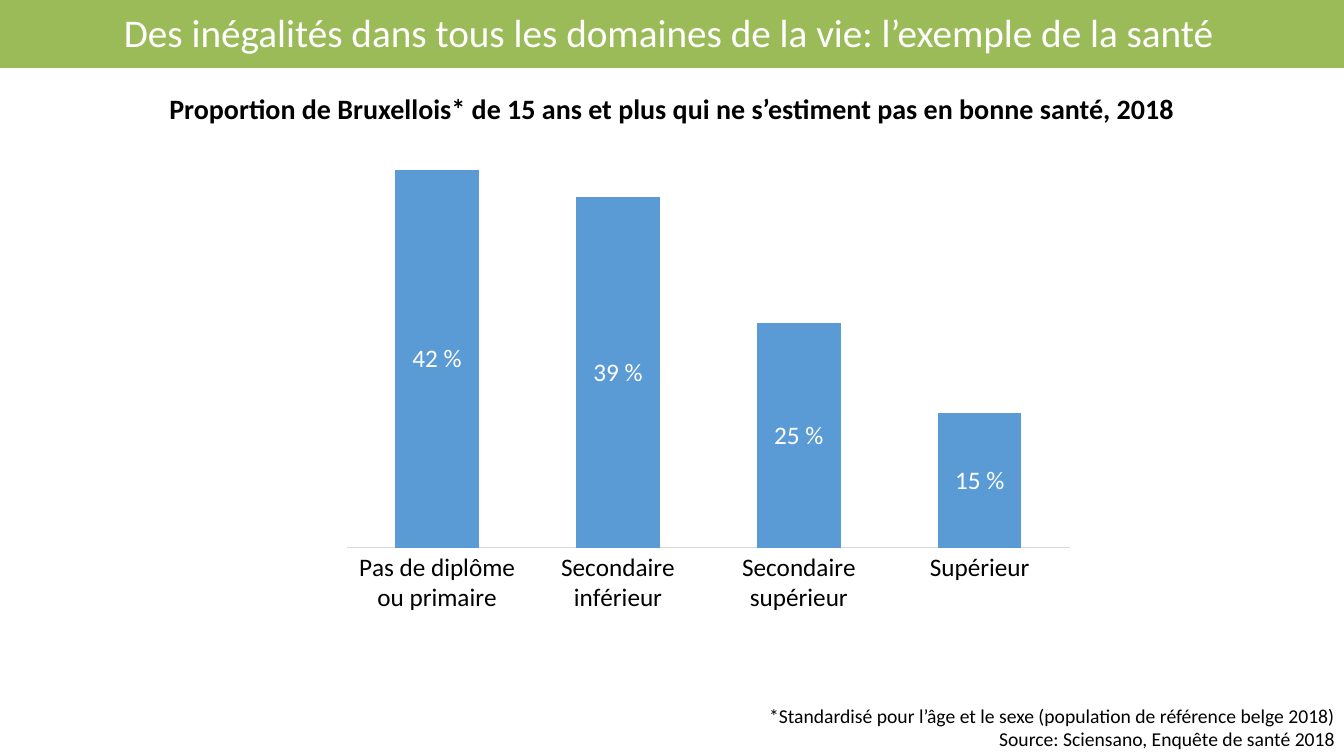
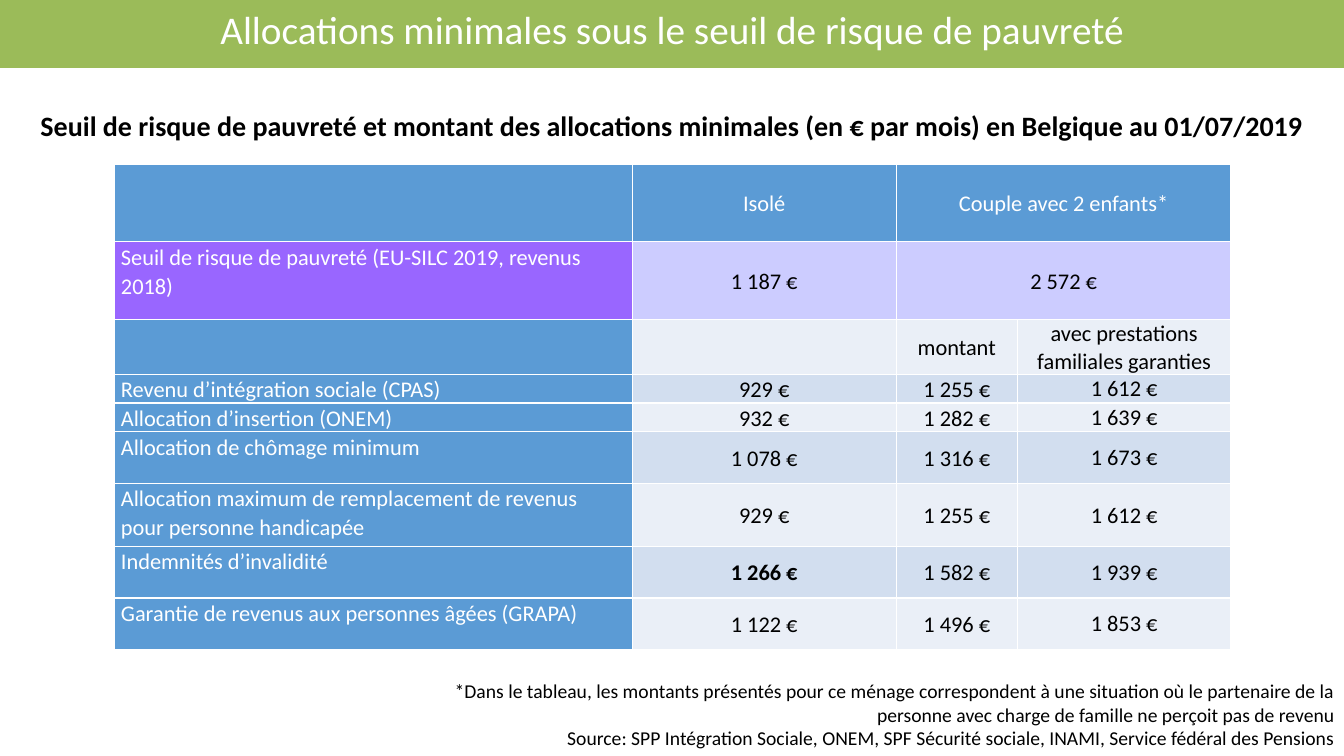
import dataclasses

import pptx
import pptx.chart.data
import pptx.dml.color
import pptx.enum.chart
import pptx.enum.text
import pptx.oxml
import pptx.oxml.ns
import pptx.util

Inches, Pt = pptx.util.Inches, pptx.util.Pt
ALIGN = pptx.enum.text.PP_ALIGN
ANCHOR = pptx.enum.text.MSO_ANCHOR

FONT = "Calibri"
HEX = {
    "band": "9BBB59",
    "white": "FFFFFF",
    "black": "000000",
    "blue": "5B9BD5",
    "dark": "D2DEEF",
    "light": "EAEFF7",
    "violet": "9966FF",
    "lilac": "CCCCFF",
    "axis": "D9D9D9",
}


@dataclasses.dataclass(frozen=True)
class Style:
    size: int
    color: str = "black"
    bold: bool = False
    align: ALIGN = ALIGN.CENTER


@dataclasses.dataclass(frozen=True)
class Box:
    left: float
    top: float
    width: float
    height: float

    def lengths(self) -> list:
        return [Inches(side) for side in dataclasses.astuple(self)]


@dataclasses.dataclass(frozen=True)
class Row:
    height: float
    texts: tuple
    head: str
    body: str
    bold: int = -1  # column set in bold


TITLE = Style(28, "white")
LEAD = Style(20, bold=True)
NOTE = Style(14, align=ALIGN.RIGHT)
HEAD = Style(16, "white", align=ALIGN.LEFT)
TOP = Style(16, "white")
BODY = Style(16)
AXIS = Style(18)
LABEL = Style(18, "white")

SHARES = {
    "Pas de diplôme ou primaire": 42,
    "Secondaire inférieur": 39,
    "Secondaire supérieur": 25,
    "Supérieur": 15,
}

COLS = (5.14, 2.62, 1.2, 2.12)
ROWS = (
    Row(0.77, ("", "Isolé", "Couple avec 2 enfants*"), "blue", "blue"),
    Row(0.77, ("Seuil de risque de pauvreté (EU-SILC 2019, revenus 2018)",
               "1 187 €", "2 572 €"), "violet", "lilac"),
    Row(0.25, ("", "", "montant", "avec prestations familiales garanties"),
        "blue", "light"),
    Row(0.25, ("Revenu d’intégration sociale (CPAS)",
               "929 €", "1 255 €", "1 612 €"), "blue", "dark"),
    Row(0.25, ("Allocation d’insertion (ONEM)",
               "932 €", "1 282 €", "1 639 €"), "blue", "light"),
    Row(0.51, ("Allocation de chômage minimum",
               "1 078 €", "1 316 €", "1 673 €"), "blue", "dark"),
    Row(0.63, ("Allocation maximum de remplacement de revenus pour personne "
               "handicapée", "929 €", "1 255 €", "1 612 €"), "blue", "light"),
    Row(0.51, ("Indemnités d’invalidité",
               "1 266 €", "1 582 €", "1 939 €"), "blue", "dark", bold=1),
    Row(0.51, ("Garantie de revenus aux personnes âgées (GRAPA)",
               "1 122 €", "1 496 €", "1 853 €"), "blue", "light"),
)


def rgb(name: str) -> pptx.dml.color.RGBColor:
    return pptx.dml.color.RGBColor.from_string(HEX[name])


def set_font(font, style: Style) -> None:
    font.name = FONT
    font.size = Pt(style.size)
    font.bold = style.bold
    font.color.rgb = rgb(style.color)


def paint_band(master) -> None:
    """Give every slide a white page with a green band on top."""
    fill = master.background.fill
    fill.gradient()
    fill.gradient_angle = 270
    for stop, name in zip(fill.gradient_stops, ("band", "white")):
        stop.position = 0.09
        stop.color.rgb = rgb(name)


def add_text(slide, box: Box, style: Style, *lines: str) -> None:
    frame = slide.shapes.add_textbox(*box.lengths()).text_frame
    frame.word_wrap = True
    frame.auto_size = pptx.enum.text.MSO_AUTO_SIZE.SHAPE_TO_FIT_TEXT
    frame.text = "\n".join(lines)
    for para in frame.paragraphs:
        para.alignment = style.align
        set_font(para.font, style)


def place_plot(chart, box: Box) -> None:
    """Fix the inner plot area, in fractions of the chart."""
    area = chart._chartSpace.chart.plotArea
    for old in area.findall(pptx.oxml.ns.qn("c:layout")):
        area.remove(old)
    sides = zip("xywh", dataclasses.astuple(box))
    parts = "".join(f'<c:{key} val="{val}"/>' for key, val in sides)
    area.insert(0, pptx.oxml.parse_xml(
        f'<c:layout {pptx.oxml.ns.nsdecls("c")}><c:manualLayout>'
        '<c:layoutTarget val="inner"/><c:xMode val="edge"/>'
        f'<c:yMode val="edge"/>{parts}</c:manualLayout></c:layout>'))


def add_bars(slide, box: Box) -> None:
    enum = pptx.enum.chart
    data = pptx.chart.data.CategoryChartData()
    data.categories = list(SHARES)
    data.add_series("Series 1", list(SHARES.values()))
    chart = slide.shapes.add_chart(
        enum.XL_CHART_TYPE.COLUMN_CLUSTERED, *box.lengths(), data).chart
    chart.has_legend = chart.has_title = False
    set_font(chart.font, Style(10))
    place_plot(chart, Box(0.1, 0.03, 0.9, 0.81))

    plot = chart.plots[0]
    plot.vary_by_categories = False
    plot.gap_width, plot.overlap = 117, -27
    fill = plot.series[0].format.fill
    fill.solid()
    fill.fore_color.rgb = rgb("blue")
    plot.has_data_labels = True
    labels = plot.data_labels
    labels.show_value = True
    labels.position = enum.XL_LABEL_POSITION.CENTER
    labels.number_format = '0" %"'
    labels.number_format_is_linked = False
    set_font(labels.font, LABEL)

    scale = chart.value_axis
    scale.minimum_scale, scale.maximum_scale = 0, 45
    scale.has_major_gridlines = scale.visible = False
    axis = chart.category_axis
    axis.major_tick_mark = enum.XL_TICK_MARK.NONE
    axis.format.line.color.rgb = rgb("axis")
    axis.format.line.width = Pt(0.75)
    set_font(axis.tick_labels.font, AXIS)


def add_edges(cell) -> None:
    props = cell._tc.get_or_add_tcPr()
    for side in "LRTB":
        props.append(pptx.oxml.parse_xml(
            f'<a:ln{side} {pptx.oxml.ns.nsdecls("a")} w="{Pt(1)}"><a:solidFill>'
            f'<a:srgbClr val="{HEX["white"]}"/></a:solidFill></a:ln{side}>'))


def fill_cell(cell, text: str, fill: str, style: Style, tight: bool) -> None:
    add_edges(cell)
    cell.fill.solid()
    cell.fill.fore_color.rgb = rgb(fill)
    cell.margin_left = cell.margin_right = Inches(0.01 if tight else 0.07)
    cell.margin_top = Inches(0.01 if tight else 0)
    cell.margin_bottom = 0
    if style.align == ALIGN.CENTER:
        cell.vertical_anchor = ANCHOR.MIDDLE
    cell.text = text
    para = cell.text_frame.paragraphs[0]
    para.alignment = style.align
    para.line_spacing = 1.0 if tight else 1.07
    set_font(para.font, style)


def add_grid(slide, box: Box) -> None:
    grid = slide.shapes.add_table(len(ROWS), len(COLS), *box.lengths()).table
    grid.first_row = grid.horz_banding = False
    for col, width in zip(grid.columns, COLS):
        col.width = Inches(width)
    last = len(COLS) - 1
    for i, row in enumerate(ROWS):
        grid.rows[i].height = Inches(row.height)
        for j in range(len(COLS)):
            text = row.texts[j] if j < len(row.texts) else ""
            style = HEAD if j == 0 else TOP if i == 0 else BODY
            if j == row.bold:
                style = dataclasses.replace(style, bold=True)
            fill = row.body if j else row.head
            fill_cell(grid.cell(i, j), text, fill, style, j == last and i > 1)
        if len(row.texts) < len(COLS):
            grid.cell(i, last - 1).merge(grid.cell(i, last))


def add_health(slide) -> None:
    add_text(slide, Box(0, 0.03, 13.26, 0.57), TITLE,
             "Des inégalités dans tous les domaines de la vie: "
             "l’exemple de la santé")
    add_text(slide, Box(0, 0.86, 13.33, 0.44), LEAD,
             "Proportion de Bruxellois* de 15 ans et plus qui ne s’estiment "
             "pas en bonne santé, 2018")
    add_text(slide, Box(6.75, 6.93, 6.59, 0.57), NOTE,
             "*Standardisé pour l’âge et le sexe "
             "(population de référence belge 2018)",
             "Source: Sciensano, Enquête de santé 2018")
    add_bars(slide, Box(2.64, 1.27, 7.98, 4.96))


def add_aid(slide) -> None:
    add_grid(slide, Box(1.13, 1.63, sum(COLS), sum(r.height for r in ROWS)))
    add_text(slide, Box(0, 0, 13.33, 0.57), TITLE,
             "Allocations minimales sous le seuil de risque de pauvreté")
    add_text(slide, Box(0, 1.03, 13.33, 0.44), LEAD,
             "Seuil de risque de pauvreté et montant des allocations minimales "
             "(en € par mois) en Belgique au 01/07/2019")
    add_text(slide, Box(4.03, 6.69, 9.31, 0.81), NOTE,
             "*Dans le tableau, les montants présentés pour ce ménage "
             "correspondent à une situation où le partenaire de la personne "
             "avec charge de famille ne perçoit pas de revenu",
             "Source: SPP Intégration Sociale, ONEM, SPF Sécurité sociale, "
             "INAMI, Service fédéral des Pensions")


def main() -> None:
    deck = pptx.Presentation()
    deck.slide_width, deck.slide_height = Inches(13.33), Inches(7.5)
    paint_band(deck.slide_master)
    for build in (add_health, add_aid):
        build(deck.slides.add_slide(deck.slide_layouts[6]))
    deck.save("out.pptx")


if __name__ == "__main__":
    main()
